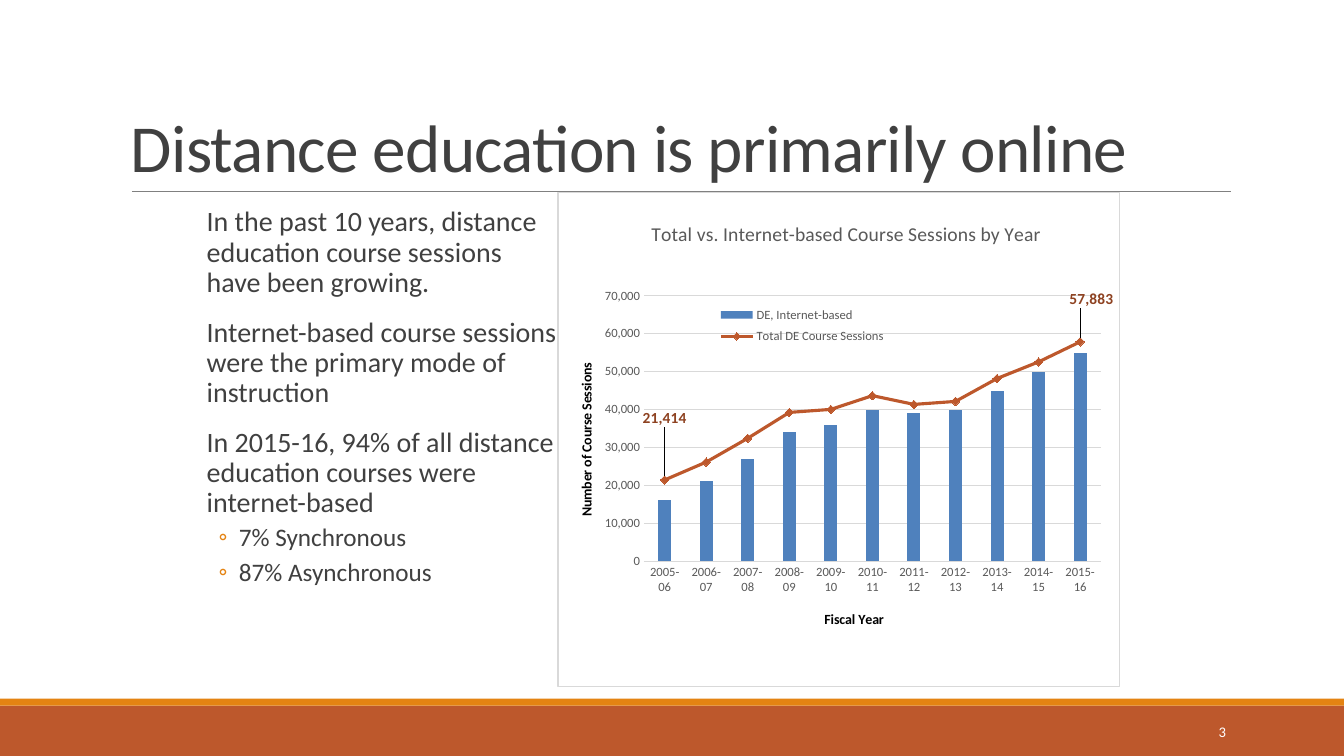
"""Build a slide on the growth of online distance education, with a combined chart."""
from copy import deepcopy
from dataclasses import dataclass

from lxml.etree import SubElement
from pptx import Presentation
from pptx.chart.chart import Chart
from pptx.chart.data import CategoryChartData
from pptx.dml.color import RGBColor
from pptx.enum.chart import XL_CHART_TYPE, XL_LABEL_POSITION, XL_LEGEND_POSITION, XL_MARKER_STYLE, XL_TICK_MARK
from pptx.enum.shapes import MSO_CONNECTOR, MSO_SHAPE
from pptx.enum.text import MSO_ANCHOR, PP_ALIGN
from pptx.oxml import parse_xml
from pptx.oxml.ns import nsdecls, qn
from pptx.slide import Slide
from pptx.text.text import Font, TextFrame
from pptx.util import Pt

FONT = "Calibri"
WHITE = RGBColor(0xFF, 0xFF, 0xFF)
BLACK = RGBColor(0, 0, 0)
RUST = RGBColor(0xBD, 0x58, 0x2C)
DARK_RUST = RGBColor(0x8E, 0x42, 0x21)
ORANGE = RGBColor(0xE4, 0x83, 0x12)
BLUE = RGBColor(0x4F, 0x81, 0xBD)
RULE_GRAY = RGBColor(0x80, 0x80, 0x80)
TEXT_GRAY = RGBColor(0x40, 0x40, 0x40)
CHART_GRAY = RGBColor(0x59, 0x59, 0x59)
GRID_GRAY = RGBColor(0xD9, 0xD9, 0xD9)

YEARS = [f"{year}-{(year + 1) % 100:02d}" for year in range(2005, 2016)]
INTERNET = [16000, 21000, 27000, 34000, 36000, 40000, 39000, 40000, 45000, 50000, 55000]
TOTAL = [21414, 26134, 32414, 39244, 40038, 43665, 41354, 42147, 48194, 52580, 57883]


@dataclass(frozen=True)
class Box:
    left: float
    top: float
    width: float
    height: float


@dataclass(frozen=True)
class Band:
    box: Box
    color: RGBColor


@dataclass(frozen=True)
class Level:
    size: float
    margin: float
    hanging: float
    before: float
    after: float
    bullet: str = ""


@dataclass(frozen=True)
class Statement:
    text: str
    level: Level


@dataclass(frozen=True)
class Callout:
    point: int
    shift_x: float
    shift_y: float


BANDS = [Band(Box(0, 504, 960, 36), RUST), Band(Box(0, 499, 960, 5), ORANGE)]
MAIN = Level(20, 7.2, 0, 12, 2)
DETAIL = Level(18, 30.24, 14.4, 2, 4, "◦")
STATEMENTS = [
    Statement("In the past 10 years, distance education course sessions have been growing.", MAIN),
    Statement("Internet-based course sessions were the primary mode of instruction", MAIN),
    Statement("In 2015-16, 94% of all distance education courses were internet-based", MAIN),
    Statement("7% Synchronous", DETAIL),
    Statement("87% Asynchronous", DETAIL),
]
CALLOUTS = [Callout(0, 0, -0.09), Callout(len(YEARS) - 1, 0.02, -0.05)]


def style_font(font: Font, size: float, color: RGBColor, bold: bool = False) -> None:
    font.name, font.size, font.bold = FONT, Pt(size), bold
    font.color.rgb = color


def add_text_frame(slide: Slide, box: Box, anchor: MSO_ANCHOR) -> TextFrame:
    frame = slide.shapes.add_textbox(Pt(box.left), Pt(box.top), Pt(box.width), Pt(box.height)).text_frame
    frame.word_wrap = True
    frame.vertical_anchor = anchor
    return frame


def add_band(slide: Slide, band: Band) -> None:
    box = band.box
    strip = slide.shapes.add_shape(
        MSO_SHAPE.RECTANGLE, Pt(box.left), Pt(box.top), Pt(box.width), Pt(box.height))
    strip.shadow.inherit = False
    strip.fill.solid()
    strip.fill.fore_color.rgb = band.color
    strip.line.fill.background()


def add_heading(slide: Slide) -> None:
    rule = slide.shapes.add_connector(MSO_CONNECTOR.STRAIGHT, Pt(94.3), Pt(136.8), Pt(879), Pt(136.8))
    rule.line.color.rgb = RULE_GRAY
    rule.line.width = Pt(0.5)
    SubElement(rule.element.spPr, qn("a:effectLst"))
    heading = add_text_frame(slide, Box(86.4, 22.3, 792, 114.5), MSO_ANCHOR.BOTTOM).paragraphs[0]
    heading.text = "Distance education is primarily online"
    heading.line_spacing = 0.85
    style_font(heading.runs[0].font, 48, TEXT_GRAY)
    heading.runs[0].font._element.set("spc", "-50")


def add_statements(slide: Slide) -> None:
    frame = add_text_frame(slide, Box(140.4, 144.7, 257.8, 356.4), MSO_ANCHOR.TOP)
    frame.margin_left = frame.margin_right = 0
    for index, statement in enumerate(STATEMENTS):
        level = statement.level
        paragraph = frame.add_paragraph() if index else frame.paragraphs[0]
        paragraph.text = statement.text
        paragraph.line_spacing = 0.9
        paragraph.space_before, paragraph.space_after = Pt(level.before), Pt(level.after)
        style_font(paragraph.runs[0].font, level.size, TEXT_GRAY)
        properties = paragraph._p.get_or_add_pPr()
        properties.set("marL", str(Pt(level.margin)))
        properties.set("indent", str(-Pt(level.hanging)))
        if level.bullet:
            paragraph.level = 1
            bullet_color = SubElement(properties, qn("a:buClr"))
            SubElement(bullet_color, qn("a:srgbClr"), val=str(ORANGE))
            SubElement(properties, qn("a:buFont"), typeface=FONT)
            SubElement(properties, qn("a:buChar"), char=level.bullet)


def place(element, index: int, mode: str = "edge", inner: bool = False, **fractions: float) -> None:
    """Give a chart part a manual layout, in fractions of the chart."""
    for old in element.findall(qn("c:layout")):
        element.remove(old)
    target = '<c:layoutTarget val="inner"/>' if inner else ""
    modes = "".join(f'<c:{axis}Mode val="{mode}"/>' for axis in "xy")
    values = "".join(f'<c:{key} val="{value}"/>' for key, value in fractions.items())
    element.insert(index, parse_xml(
        f'<c:layout {nsdecls("c")}><c:manualLayout>{target}{modes}{values}</c:manualLayout></c:layout>'))


def move_total_to_line(chart: Chart) -> None:
    bars = chart.element.xpath(".//c:barChart")[0]
    total = bars.findall(qn("c:ser"))[1]
    for flag in total.findall(qn("c:invertIfNegative")):
        total.remove(flag)
    line = parse_xml(f'<c:lineChart {nsdecls("c")}><c:grouping val="standard"/>'
                     '<c:varyColors val="0"/><c:marker val="1"/></c:lineChart>')
    line.insert(2, total)
    for axis_id in bars.findall(qn("c:axId")):
        line.append(deepcopy(axis_id))
    bars.addnext(line)


def style_total(chart: Chart) -> None:
    total = chart.plots[1].series[0]
    total.smooth = False
    total.format.line.color.rgb = RUST
    total.format.line.width = Pt(2.25)
    total.marker.style, total.marker.size = XL_MARKER_STYLE.DIAMOND, 6
    total.marker.format.fill.solid()
    total.marker.format.fill.fore_color.rgb = RUST
    total.marker.format.line.color.rgb = RUST
    total.data_labels.show_value = False
    for callout in CALLOUTS:
        label = total.points[callout.point].data_label
        style_font(label.font, 11, DARK_RUST, True)
        label.position = XL_LABEL_POSITION.ABOVE
    for element, callout in zip(chart.element.xpath(".//c:dLbl"), CALLOUTS):
        place(element, 1, "factor", x=callout.shift_x, y=callout.shift_y)
        element.insert(2, parse_xml(
            f'<c:numFmt {nsdecls("c")} formatCode="#,##0" sourceLinked="0"/>'))


def style_axes(chart: Chart) -> None:
    years, sessions = chart.category_axis, chart.value_axis
    for axis, caption, x, y in ((years, "Fiscal Year", 0.47, 0.84),
                                (sessions, "Number of Course Sessions", 0.03, 0.34)):
        axis.major_tick_mark = axis.minor_tick_mark = XL_TICK_MARK.NONE
        style_font(axis.tick_labels.font, 9, CHART_GRAY)
        title = axis.axis_title.text_frame.paragraphs[0]
        title.text = caption
        style_font(title.runs[0].font, 10, BLACK, True)
        place(axis.axis_title._element, 1, x=x, y=y)
    years.format.line.color.rgb = GRID_GRAY
    years.format.line.width = Pt(0.75)
    sessions.format.line.fill.background()
    sessions.minimum_scale, sessions.maximum_scale, sessions.major_unit = 0, 70000, 10000
    sessions.major_gridlines.format.line.color.rgb = GRID_GRAY
    sessions.major_gridlines.format.line.width = Pt(0.75)
    sessions.tick_labels.number_format = "#,##0"
    sessions.tick_labels.number_format_is_linked = False


def add_sessions_chart(slide: Slide) -> None:
    data = CategoryChartData(number_format="#,##0")
    data.categories = YEARS
    data.add_series("DE, Internet-based", INTERNET)
    data.add_series("Total DE Course Sessions", TOTAL)
    chart = slide.shapes.add_chart(
        XL_CHART_TYPE.COLUMN_CLUSTERED, Pt(398.2), Pt(136.8), Pt(401.8), Pt(354.2), data).chart
    style_font(chart.font, 10, BLACK)
    move_total_to_line(chart)
    columns = chart.plots[0]
    columns.gap_width, columns.overlap, columns.vary_by_categories = 219, -27, False
    columns.series[0].format.fill.solid()
    columns.series[0].format.fill.fore_color.rgb = BLUE
    style_total(chart)
    style_axes(chart)
    title = chart.chart_title.text_frame.paragraphs[0]
    title.text = "Total vs. Internet-based Course Sessions by Year"
    style_font(title.runs[0].font, 14, CHART_GRAY)
    place(chart.chart_title._element, 1, x=0.16, y=0.05)
    chart.has_legend = True
    chart.legend.position = XL_LEGEND_POSITION.RIGHT
    chart.legend.include_in_layout = False
    style_font(chart.legend.font, 9, CHART_GRAY)
    place(chart.legend._element, 1, x=0.27, y=0.22, w=0.33, h=0.1)
    place(chart.element.xpath(".//c:plotArea")[0], 0, inner=True, x=0.153, y=0.21, w=0.814, h=0.536)
    chart.element.xpath("c:chart")[0].addnext(parse_xml(
        f'<c:spPr {nsdecls("c", "a")}><a:solidFill><a:srgbClr val="{WHITE}"/></a:solidFill>'
        f'<a:ln w="{Pt(0.75)}"><a:solidFill><a:srgbClr val="{GRID_GRAY}"/></a:solidFill></a:ln></c:spPr>'))


def add_slide_number(slide: Slide) -> None:
    number = add_text_frame(slide, Box(779.8, 508.3, 103, 28.8), MSO_ANCHOR.MIDDLE).paragraphs[0]
    number.text = "3"
    number.alignment = PP_ALIGN.RIGHT
    style_font(number.runs[0].font, 10.5, WHITE)


def main() -> None:
    deck = Presentation()
    deck.slide_width, deck.slide_height = Pt(960), Pt(540)
    slide = deck.slides.add_slide(deck.slide_layouts[6])
    for band in BANDS:
        add_band(slide, band)
    add_heading(slide)
    add_statements(slide)
    add_sessions_chart(slide)
    add_slide_number(slide)
    deck.save("out.pptx")


if __name__ == "__main__":
    main()
